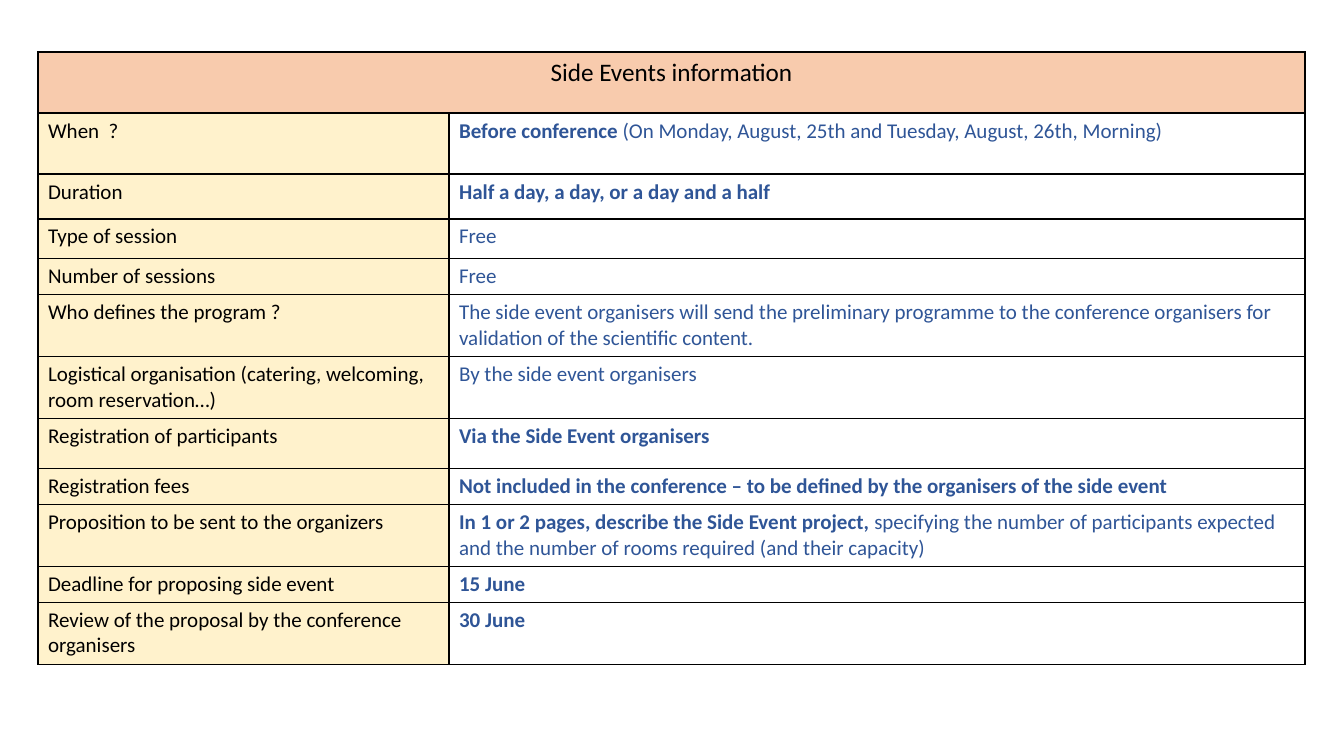
import lxml.etree
import pptx
import pptx.dml.color
import pptx.enum.text
import pptx.oxml.ns
import pptx.util

BLACK = "000000"
BLUE = "2F5597"
PEACH = "F8CBAD"
CREAM = "FFF2CC"
WHITE = "FFFFFF"

TITLE = "Side Events information"
TITLE_HEIGHT = 61
LABEL_WIDTH = 411
ROWS = [
    (61, "When  ?", "Before conference ", "(On Monday, August, 25th and Tuesday, August, 26th, Morning)"),
    (45, "Duration", "Half a day, a day, or a day and a half", ""),
    (40, "Type of session", "", "Free"),
    (36, "Number of sessions", "", "Free"),
    (61, "Who defines the program ?", "",
     "The side event organisers will send the preliminary programme to the "
     "conference organisers for validation of the scientific content."),
    (62, "Logistical organisation (catering, welcoming, room reservation…)", "",
     "By the side event organisers"),
    (50, "Registration of participants", "Via the Side Event organisers", ""),
    (36, "Registration fees",
     "Not included in the conference – to be defined by the organisers of the side event", ""),
    (62, "Proposition to be sent to the organizers",
     "In 1 or 2 pages, describe the Side Event project, ",
     "specifying the number of participants expected and the number of rooms required (and their capacity)"),
    (35, "Deadline for proposing side event", "15 June", ""),
    (62, "Review of the proposal by the conference organisers", "30 June", ""),
]


def px(length):
    return pptx.util.Emu(round(length * 9144000 / 1008))


def colour(value):
    return pptx.dml.color.RGBColor.from_string(value)


def add_text(para, text, size=15, color=BLACK, bold=False):
    span = para.add_run()
    span.text = text
    span.font.name = "Calibri"
    span.font.size = pptx.util.Pt(size)
    span.font.bold = bold
    span.font.color.rgb = colour(color)


def style_cell(cell, fill):
    properties = cell._tc.get_or_add_tcPr()
    for side in ("lnL", "lnR", "lnT", "lnB"):
        line = lxml.etree.SubElement(
            properties, pptx.oxml.ns.qn("a:" + side), w=str(pptx.util.Pt(1)))
        solid = lxml.etree.SubElement(line, pptx.oxml.ns.qn("a:solidFill"))
        lxml.etree.SubElement(solid, pptx.oxml.ns.qn("a:srgbClr"), val=BLACK)
    cell.fill.solid()
    cell.fill.fore_color.rgb = colour(fill)


def add_information_table(page, left, top, width):
    heights = [TITLE_HEIGHT] + [row[0] for row in ROWS]
    frame = page.shapes.add_table(
        len(heights), 2, px(left), px(top), px(width), px(sum(heights)))
    table = frame.table
    table.first_row = False
    table.horz_banding = False
    table.columns[0].width = px(LABEL_WIDTH)
    table.columns[1].width = px(width - LABEL_WIDTH)
    for index, height in enumerate(heights):
        table.rows[index].height = px(height)

    title = table.cell(0, 0)
    title.merge(table.cell(0, 1))
    for column in range(2):
        style_cell(table.cell(0, column), PEACH)
    para = title.text_frame.paragraphs[0]
    para.alignment = pptx.enum.text.PP_ALIGN.CENTER
    add_text(para, TITLE, size=18)

    for index, (_, label, strong, plain) in enumerate(ROWS, start=1):
        label_cell = table.cell(index, 0)
        style_cell(label_cell, CREAM)
        add_text(label_cell.text_frame.paragraphs[0], label)
        value_cell = table.cell(index, 1)
        style_cell(value_cell, WHITE)
        para = value_cell.text_frame.paragraphs[0]
        for text, bold in ((strong, True), (plain, False)):
            if text:
                add_text(para, text, color=BLUE, bold=bold)


def main():
    deck = pptx.Presentation()
    deck.slide_width = px(1344)
    deck.slide_height = px(756)
    page = deck.slides.add_slide(deck.slide_layouts[6])
    add_information_table(page, 38, 52, 1267)
    deck.save("out.pptx")


if __name__ == "__main__":
    main()
